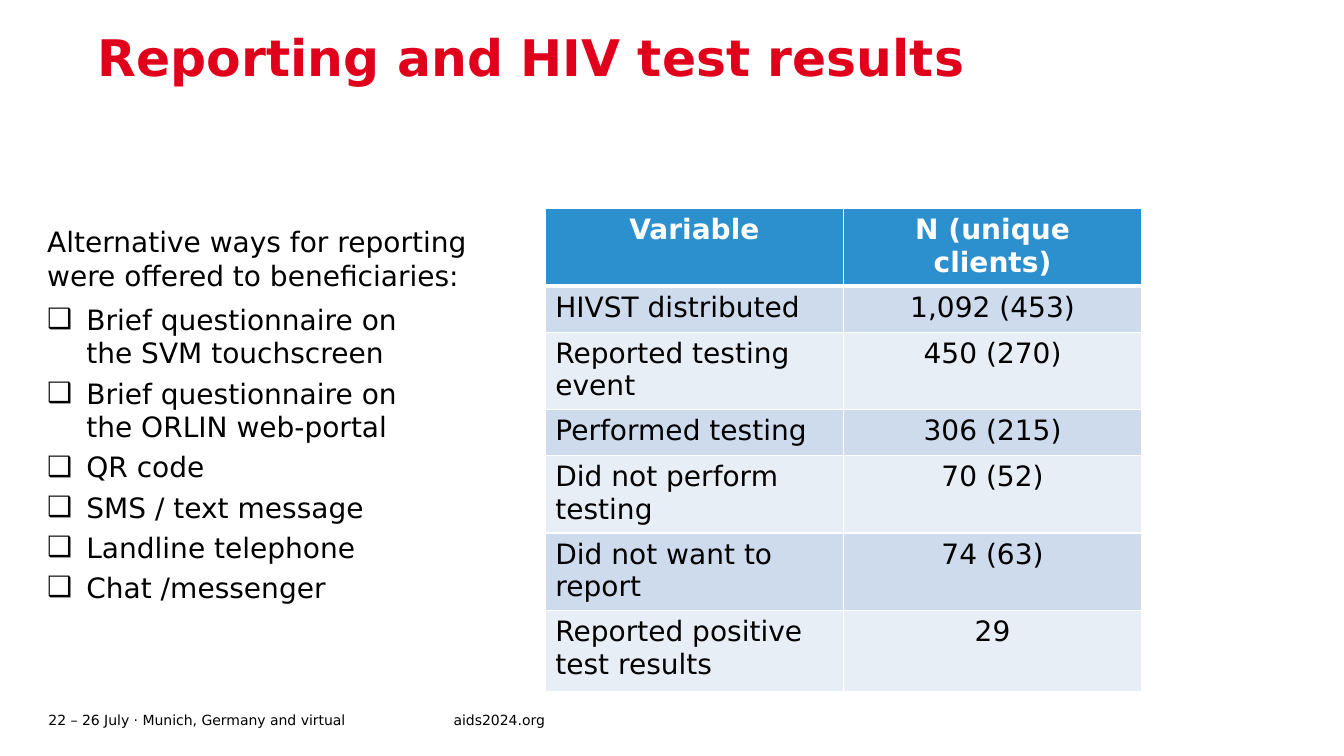
"""Build the slide on reporting and HIV test results."""
import dataclasses
import typing

import lxml.etree
import pptx
import pptx.dml.color
import pptx.enum.text
import pptx.oxml.ns
import pptx.util

Pt = pptx.util.Pt
ANCHOR = pptx.enum.text.MSO_ANCHOR
ALIGN = pptx.enum.text.PP_ALIGN
AUTO_SIZE = pptx.enum.text.MSO_AUTO_SIZE
FONT = "DejaVu Sans"
COLOURS = {
    "title": "E0001B",
    "text": "000000",
    "header": "2C90CF",
    "odd_row": "CDDBED",
    "even_row": "E8EEF6",
    "white": "FFFFFF",
}


@dataclasses.dataclass(frozen=True)
class TextBlock:
    left: float
    top: float
    width: float
    height: float
    lines: tuple[str, ...]
    size: float = 20
    colour: str = "text"
    bold: bool = False
    bullet: str = ""
    frame_format: dict[str, typing.Any] = dataclasses.field(default_factory=dict)
    para_format: dict[str, typing.Any] = dataclasses.field(default_factory=dict)


NO_MARGINS = dict.fromkeys(("margin_left", "margin_top", "margin_right", "margin_bottom"), 0)
FOOTER = {**NO_MARGINS, "vertical_anchor": ANCHOR.MIDDLE}
GROWING = {"auto_size": AUTO_SIZE.SHAPE_TO_FIT_TEXT}
BULLET_INDENT = 28
BULLET_GAP = 4.7

BLOCKS = (
    TextBlock(34.6, 505.4, 289.4, 17.3, ("22 – 26 July · Munich, Germany and virtual",),
              size=10, frame_format=FOOTER),
    TextBlock(324, 505.4, 139, 17.3, ("aids2024.org",), size=10, frame_format=FOOTER),
    TextBlock(70, 23.8, 674, 72, ("Reporting and HIV test results",), size=36,
              colour="title", bold=True, frame_format=NO_MARGINS,
              para_format={"line_spacing": 0.9}),
    TextBlock(26.6, 212.4, 294.5, 226, (
        "Brief questionnaire on the SVM touchscreen",
        "Brief questionnaire on the ORLIN web-portal",
        "QR code",
        "SMS / text message",
        "Landline telephone",
        "Chat /messenger",
    ), bullet="❑", frame_format=GROWING),
    TextBlock(26.6, 157, 326.2, 55.4,
              ("Alternative ways for reporting were offered to beneficiaries:",),
              frame_format=GROWING),
)

RESULTS = (
    ("Variable", "N (unique clients)"),
    ("HIVST distributed", "1,092 (453)"),
    ("Reported testing event", "450 (270)"),
    ("Performed testing", "306 (215)"),
    ("Did not perform testing", "70 (52)"),
    ("Did not want to report", "74 (63)"),
    ("Reported positive test results", "29"),
)
TABLE_LEFT, TABLE_TOP = 389.5, 149
COLUMN_WIDTH, ROW_HEIGHT, LAST_ROW_HEIGHT = 213, 33, 58


def rgb(name: str) -> pptx.dml.color.RGBColor:
    return pptx.dml.color.RGBColor.from_string(COLOURS[name])


def apply_format(target: typing.Any, values: dict[str, typing.Any]) -> None:
    for name, value in values.items():
        setattr(target, name, value)


def add_element(parent: typing.Any, tag: str, **attributes: str) -> typing.Any:
    return lxml.etree.SubElement(parent, pptx.oxml.ns.qn(tag), attributes)


def write_span(para: typing.Any, text: str, size: float, colour: str, bold: bool) -> None:
    span = para.add_run()
    span.text = text
    apply_format(span.font, {"name": FONT, "size": Pt(size), "bold": bold})
    span.font.color.rgb = rgb(colour)


def add_bullet(para: typing.Any, character: str) -> None:
    properties = para._p.get_or_add_pPr()
    properties.set("marL", str(Pt(BULLET_INDENT)))
    properties.set("indent", str(-Pt(BULLET_INDENT)))
    add_element(properties, "a:buFont", typeface=FONT)
    add_element(properties, "a:buChar", char=character)


def add_text(page: typing.Any, block: TextBlock) -> None:
    box = page.shapes.add_textbox(
        Pt(block.left), Pt(block.top), Pt(block.width), Pt(block.height))
    frame = box.text_frame
    apply_format(frame, {"word_wrap": True, **block.frame_format})
    for index, line in enumerate(block.lines):
        para = frame.add_paragraph() if index else frame.paragraphs[0]
        if block.bullet:
            add_bullet(para, block.bullet)
        if index:
            para.space_before = Pt(BULLET_GAP)
        apply_format(para, block.para_format)
        write_span(para, line, block.size, block.colour, block.bold)


def add_borders(cell: typing.Any, widths: dict[str, float]) -> None:
    properties = cell._tc.get_or_add_tcPr()
    for index, (side, width) in enumerate(widths.items()):
        border = add_element(properties, f"a:{side}", w=str(Pt(width)))
        fill = add_element(border, "a:solidFill")
        add_element(fill, "a:srgbClr", val=COLOURS["white"])
        properties.insert(index, border)


def add_results_table(page: typing.Any) -> None:
    row_heights = [ROW_HEIGHT] * (len(RESULTS) - 1) + [LAST_ROW_HEIGHT]
    columns = len(RESULTS[0])
    table = page.shapes.add_table(
        len(RESULTS), columns, Pt(TABLE_LEFT), Pt(TABLE_TOP),
        Pt(COLUMN_WIDTH * columns), Pt(sum(row_heights))).table
    for row, height in zip(table.rows, row_heights):
        row.height = Pt(height)
    for row_index, texts in enumerate(RESULTS):
        header = row_index == 0
        fill = "header" if header else "odd_row" if row_index % 2 else "even_row"
        for column_index, text in enumerate(texts):
            cell = table.cell(row_index, column_index)
            cell.fill.solid()
            cell.fill.fore_color.rgb = rgb(fill)
            add_borders(cell, {"lnL": 1, "lnR": 1, "lnT": 3 if row_index == 1 else 1,
                               "lnB": 3 if header else 1})
            para = cell.text_frame.paragraphs[0]
            para.alignment = ALIGN.CENTER if header or column_index else ALIGN.LEFT
            write_span(para, text, 20, "white" if header else "text", header)


def main() -> None:
    deck = pptx.Presentation()
    apply_format(deck, {"slide_width": Pt(960), "slide_height": Pt(540)})
    page = deck.slides.add_slide(deck.slide_layouts[6])
    for block in BLOCKS:
        add_text(page, block)
    add_results_table(page)
    deck.save("out.pptx")


if __name__ == "__main__":
    main()
